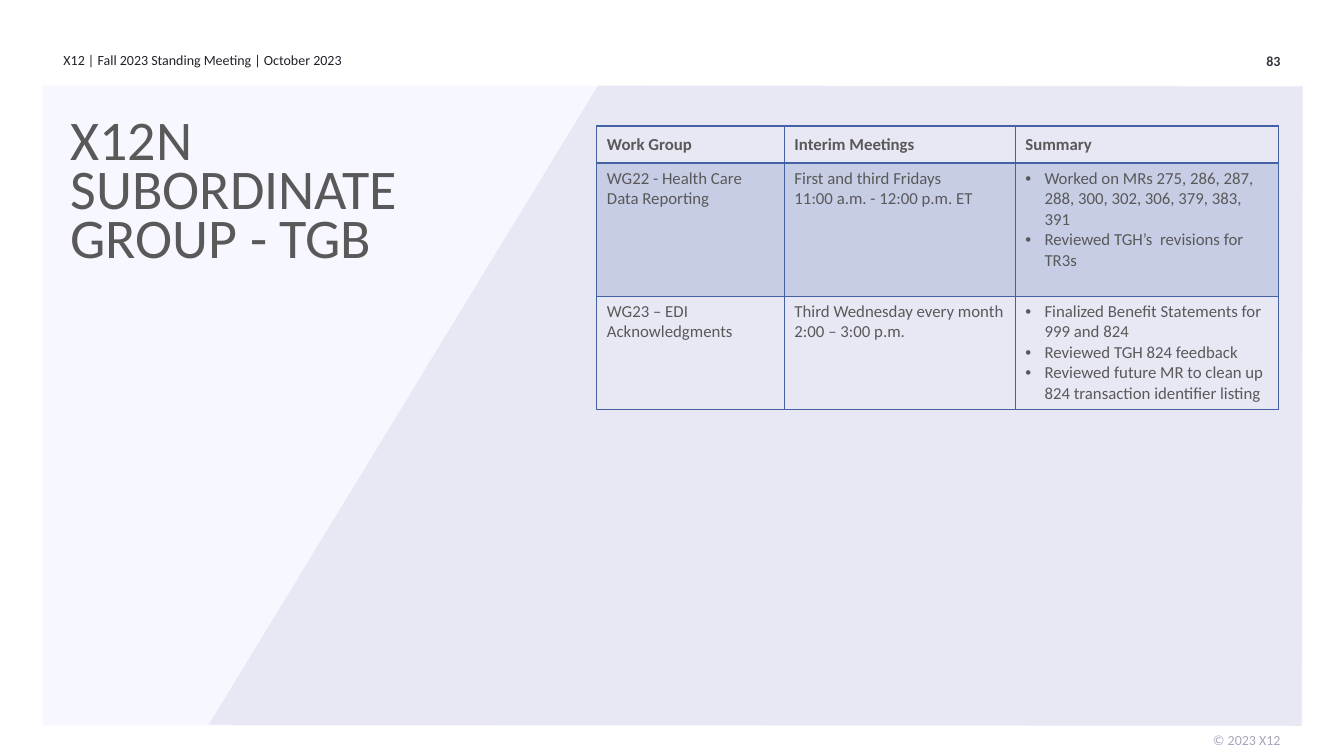
"""Build the X12N subordinate group slide with its work group table."""
from lxml import etree
from pptx import Presentation
from pptx import util as u
from pptx.dml.color import RGBColor
from pptx.enum import shapes, text
from pptx.oxml import ns

FONT = "Calibri"
COLORS = {
    "panel": "F7F7FF",
    "slant": "E8E8F5",
    "body": "595959",
    "header": "21212B",
    "number": "363640",
    "copyright": "A6A6BA",
    "table": "4361A3",
}
SLANT_POINTS = [(207, 719), (593, 85), (1292, 86), (1291, 720)]
COLUMN_WIDTHS = [1.86, 2.29, 2.61]
ROW_HEIGHTS = [0.37, 1.32, 1.12]
WORK_GROUPS = [
    [["Work Group"], ["Interim Meetings"], ["Summary"]],
    [
        ["WG22 - Health Care Data Reporting"],
        ["First and third Fridays", "11:00 a.m. - 12:00 p.m. ET"],
        [
            "Worked on MRs 275, 286, 287, 288, 300, 302, 306, 379, 383, 391",
            "Reviewed TGH’s  revisions for TR3s",
        ],
    ],
    [
        ["WG23 – EDI Acknowledgments"],
        ["Third Wednesday every month", "2:00 – 3:00 p.m."],
        [
            "Finalized Benefit Statements for 999 and 824",
            "Reviewed TGH 824 feedback",
            "Reviewed future MR to clean up 824 transaction identifier listing",
        ],
    ],
]


def rgb(name):
    return RGBColor.from_string(COLORS[name])


def style_font(font, size, color, bold=False):
    font.name = FONT
    font.size = u.Pt(size)
    font.bold = bold
    font.color.rgb = rgb(color)


def place(shape, left, top, width, height):
    shape.left, shape.top = u.Inches(left), u.Inches(top)
    shape.width, shape.height = u.Inches(width), u.Inches(height)


def clear_insets(frame):
    frame.margin_left = frame.margin_right = 0
    frame.margin_top = frame.margin_bottom = 0
    frame.word_wrap = True
    frame.vertical_anchor = text.MSO_ANCHOR.TOP


def paint(shape, color):
    shape.shadow.inherit = False
    shape.fill.solid()
    shape.fill.fore_color.rgb = rgb(color)
    shape.line.fill.background()


def add_background(page):
    panel = page.shapes.add_shape(shapes.MSO_SHAPE.RECTANGLE, 0, 0, 0, 0)
    place(panel, 0.42, 0.85, 12.5, 6.35)
    paint(panel, "panel")
    start, *others = SLANT_POINTS
    builder = page.shapes.build_freeform(*start, scale=u.Inches(0.01))
    builder.add_line_segments(others, close=True)
    paint(builder.convert_to_shape(), "slant")


def add_label(page, words, position, color, align=text.PP_ALIGN.RIGHT, bold=False):
    box = page.shapes.add_textbox(0, 0, 0, 0)
    place(box, *position)
    clear_insets(box.text_frame)
    para = box.text_frame.paragraphs[0]
    para.text = words
    para.alignment = align
    style_font(para.font, 10, color, bold)


def set_title(page, words):
    title = page.shapes.title
    title.element.getparent().append(title.element)
    place(title, 0.7, 1.22, 3.69, 1.9)
    frame = title.text_frame
    clear_insets(frame)
    frame.auto_size = text.MSO_AUTO_SIZE.NONE
    para = frame.paragraphs[0]
    para.text = words
    para.alignment = text.PP_ALIGN.LEFT
    para.line_spacing = u.Pt(35)
    style_font(para.font, 40, "body")


def add_bullet(para):
    props = para._p.get_or_add_pPr()
    props.set("marL", str(u.Inches(0.19)))
    props.set("indent", str(-u.Inches(0.19)))
    etree.SubElement(props, ns.qn("a:buFont"), typeface="Arial")
    etree.SubElement(props, ns.qn("a:buChar"), char="•")


def add_color(parent, color):
    fill = etree.SubElement(parent, ns.qn("a:solidFill"))
    return etree.SubElement(fill, ns.qn("a:srgbClr"), val=COLORS[color])


def set_borders(cell, widths):
    props = cell._tc.get_or_add_tcPr()
    for side, width in zip("LRTB", widths):
        line = etree.SubElement(props, ns.qn(f"a:ln{side}"), w=str(u.Pt(width)))
        add_color(line, "table")


def fill_cell(cell, lines, row, bulleted):
    heading = row == 0
    cell.text = "\n".join(lines)
    for para in cell.text_frame.paragraphs:
        if bulleted:
            add_bullet(para)
        style_font(para.font, 12, "body", heading)
    cell.vertical_anchor = text.MSO_ANCHOR.MIDDLE if heading else text.MSO_ANCHOR.TOP
    set_borders(cell, (1, 1, 2 if row == 1 else 1, 2 if heading else 1))
    if row == 1:
        tint = add_color(cell._tc.get_or_add_tcPr(), "table")
        etree.SubElement(tint, ns.qn("a:alpha"), val="20000")
    else:
        cell.fill.background()


def add_group_table(page):
    frame = page.shapes.add_table(
        len(ROW_HEIGHTS), len(COLUMN_WIDTHS), u.Inches(5.92), u.Inches(1.25),
        u.Inches(sum(COLUMN_WIDTHS)), u.Inches(sum(ROW_HEIGHTS)))
    table = frame.table
    table.horz_banding = False
    for column, width in zip(table.columns, COLUMN_WIDTHS):
        column.width = u.Inches(width)
    for row, height in zip(table.rows, ROW_HEIGHTS):
        row.height = u.Inches(height)
    for row, entries in enumerate(WORK_GROUPS):
        for column, lines in enumerate(entries):
            fill_cell(table.cell(row, column), lines, row, row > 0 and column == 2)


def main():
    deck = Presentation()
    deck.slide_width, deck.slide_height = u.Inches(13.33), u.Inches(7.5)
    page = deck.slides.add_slide(deck.slide_layouts.get_by_name("Title Only"))
    add_background(page)
    add_label(page, "X12 | Fall 2023 Standing Meeting | October 2023",
              (0.63, 0.51, 4.5, 0.25), "header", text.PP_ALIGN.LEFT)
    add_label(page, "83", (11.19, 0.52, 1.51, 0.25), "number", bold=True)
    add_label(page, "© 2023 X12", (11.19, 7.26, 1.51, 0.24), "copyright")
    set_title(page, "X12N SUBORDINATE GROUP - TGB")
    add_group_table(page)
    deck.save("out.pptx")


if __name__ == "__main__":
    main()
